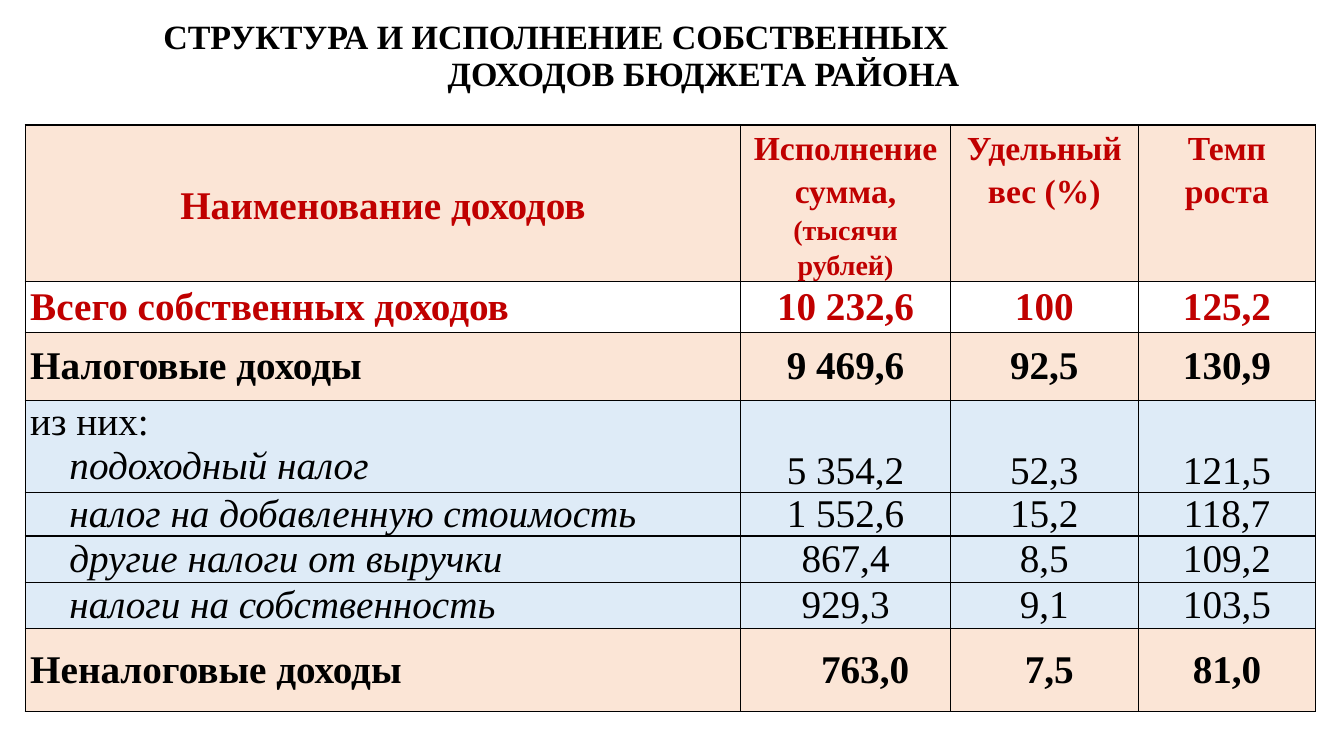
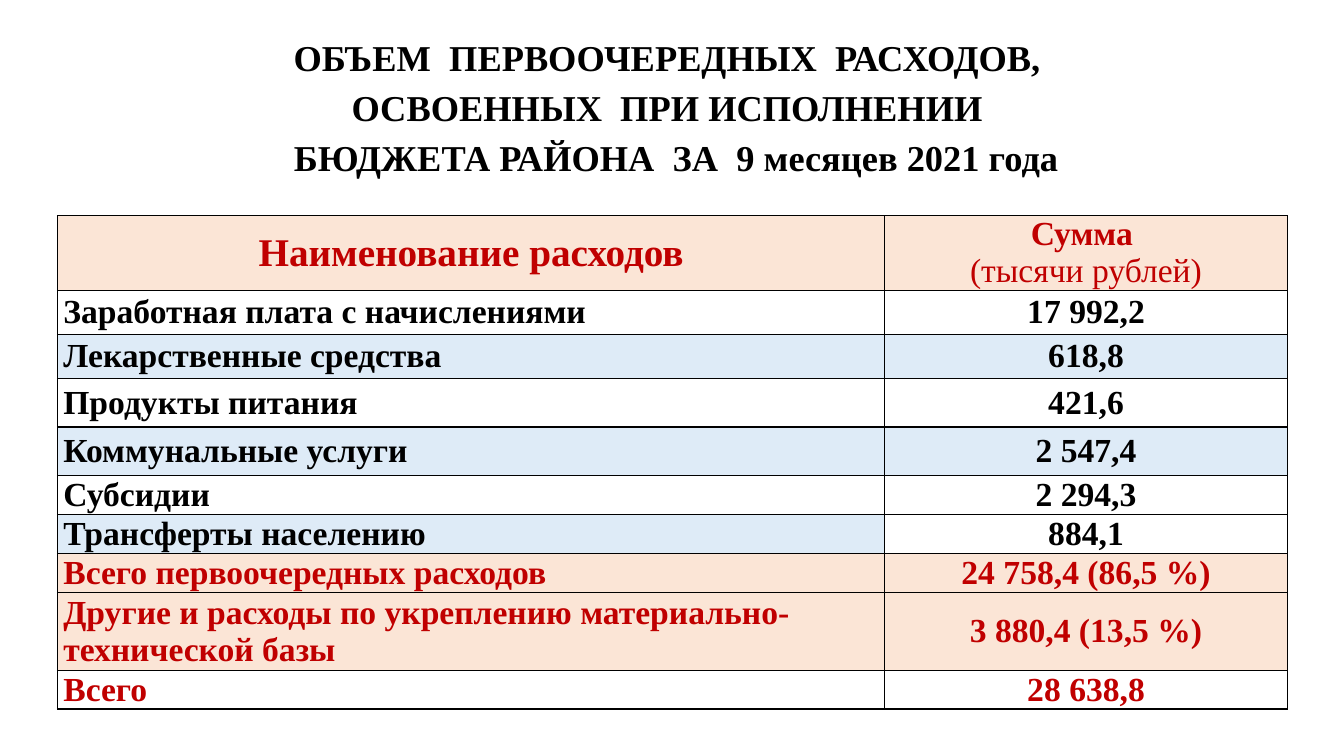
from dataclasses import dataclass, replace

from lxml import etree
from pptx import Presentation
from pptx.dml.color import RGBColor
from pptx.enum import text as t
from pptx.oxml import ns
from pptx.util import Pt

FONT = "Times New Roman"
BLACK = RGBColor(0x00, 0x00, 0x00)
RED = RGBColor(0xC0, 0x00, 0x00)
WHITE = RGBColor(0xFF, 0xFF, 0xFF)
PEACH = RGBColor(0xFB, 0xE5, 0xD6)
BLUE = RGBColor(0xDE, 0xEB, 0xF7)

LEFT, CENTER = t.PP_ALIGN.LEFT, t.PP_ALIGN.CENTER
TOP, MIDDLE, BOTTOM = t.MSO_ANCHOR.TOP, t.MSO_ANCHOR.MIDDLE, t.MSO_ANCHOR.BOTTOM
BORDER_WIDTH = Pt(1)
TITLE_ONLY = 5
NEST = 28  # indent of the individual taxes


@dataclass(frozen=True)
class Line:
    text: str
    size: float = 28
    color: RGBColor = BLACK
    bold: bool = True
    italic: bool = False
    align: t.PP_ALIGN = CENTER
    indent: float = 0
    spacing: float = 1.0


@dataclass(frozen=True)
class Cell:
    lines: list[Line]
    fill: RGBColor = WHITE
    anchor: t.MSO_ANCHOR = MIDDLE


@dataclass(frozen=True)
class Row:
    height: float
    cells: list[Cell]


@dataclass(frozen=True)
class Grid:
    left: float
    top: float
    columns: list[float]
    inset: float
    rows: list[Row]


def write_lines(frame, lines: list[Line]) -> None:
    frame.text = "\n".join(line.text for line in lines)
    for paragraph, line in zip(frame.paragraphs, lines):
        paragraph.alignment = line.align
        paragraph.line_spacing = line.spacing
        if line.indent:
            paragraph._p.get_or_add_pPr().set("marL", str(Pt(line.indent)))
        for run in paragraph.runs:
            font = run.font
            font.name, font.size = FONT, Pt(line.size)
            font.bold, font.italic = line.bold, line.italic
            font.color.rgb = line.color


def add_titled_slide(deck, box: tuple[float, ...], lines: list[Line]):
    slide = deck.slides.add_slide(deck.slide_layouts[TITLE_ONLY])
    title = slide.shapes.title
    title.left, title.top, title.width, title.height = map(Pt, box)
    frame = title.text_frame
    frame.word_wrap = True
    frame.auto_size = t.MSO_AUTO_SIZE.NONE
    frame.vertical_anchor = MIDDLE
    write_lines(frame, lines)
    return slide


def draw_borders(cell) -> None:
    properties = cell._tc.get_or_add_tcPr()
    for position, side in enumerate(("a:lnL", "a:lnR", "a:lnT", "a:lnB")):
        edge = etree.Element(ns.qn(side), w=str(BORDER_WIDTH))
        paint = etree.SubElement(edge, ns.qn("a:solidFill"))
        etree.SubElement(paint, ns.qn("a:srgbClr"), val=str(BLACK))
        properties.insert(position, edge)


def add_grid(slide, grid: Grid) -> None:
    width = sum(grid.columns)
    height = sum(row.height for row in grid.rows)
    table = slide.shapes.add_table(
        len(grid.rows), len(grid.columns),
        Pt(grid.left), Pt(grid.top), Pt(width), Pt(height)).table
    table.first_row = table.horz_banding = False
    for column, column_width in zip(table.columns, grid.columns):
        column.width = Pt(column_width)
    for table_row, row in zip(table.rows, grid.rows):
        table_row.height = Pt(row.height)
        for target, content in zip(table_row.cells, row.cells):
            target.margin_left = target.margin_right = Pt(grid.inset)
            target.margin_top = target.margin_bottom = 0
            target.vertical_anchor = content.anchor
            target.fill.solid()
            target.fill.fore_color.rgb = content.fill
            write_lines(target.text_frame, content.lines)
            draw_borders(target)


def figures_row(height: float, name: str, values: list[str], fill: RGBColor,
                style: Line) -> Row:
    """Left-aligned name followed by centred figures in one style."""
    cells = [Cell([replace(style, text=name, align=LEFT)], fill)]
    cells += [Cell([replace(style, text=value)], fill) for value in values]
    return Row(height, cells)


def tax_row(height: float, name: str, values: list[str],
            lead: str = "") -> Row:
    """Nested tax in italics, with an optional lead-in line above it."""
    plain = Line("", bold=False)
    label = [replace(plain, text=lead, align=LEFT)] if lead else []
    label.append(replace(plain, text=name, italic=True, align=LEFT,
                         indent=NEST))
    anchor = BOTTOM if lead else MIDDLE
    cells = [Cell(label, BLUE, TOP if lead else MIDDLE)]
    cells += [Cell([replace(plain, text=value)], BLUE, anchor)
              for value in values]
    return Row(height, cells)


def income_grid() -> Grid:
    heading = Line("", 24, RED, spacing=1.15)
    header = Row(111, [
        Cell([replace(heading, text="Наименование доходов", size=28)], PEACH),
        Cell([replace(heading, text="Исполнение сумма,"),
              replace(heading, text="(тысячи рублей)", size=20)], PEACH, TOP),
        Cell([replace(heading, text="Удельный вес (%)")], PEACH, TOP),
        Cell([replace(heading, text="Темп роста")], PEACH, TOP),
    ])
    non_tax = Row(59.5, [
        Cell([Line("Неналоговые доходы", align=LEFT)], PEACH),
        Cell([Line("763,0", indent=NEST)], PEACH),
        Cell([Line("7,5", indent=7)], PEACH),
        Cell([Line("81,0")], PEACH),
    ])
    return Grid(18, 89.3, [511, 150, 134, 127], 3.6, [
        header,
        figures_row(36, "Всего собственных доходов",
                    ["10 232,6", "100", "125,2"], WHITE, Line("", color=RED)),
        figures_row(49, "Налоговые доходы", ["9 469,6", "92,5", "130,9"],
                    PEACH, Line("")),
        tax_row(65.5, "подоходный налог", ["5 354,2", "52,3", "121,5"],
                lead="из них:"),
        tax_row(30.5, "налог на добавленную стоимость",
                ["1 552,6", "15,2", "118,7"]),
        tax_row(33, "другие налоги от выручки", ["867,4", "8,5", "109,2"]),
        tax_row(33, "налоги на собственность", ["929,3", "9,1", "103,5"]),
        non_tax,
    ])


def expense_grid() -> Grid:
    item, total = Line("", 24), Line("", 24, RED)
    header = Row(53.5, [
        Cell([Line("Наименование расходов", color=RED)], PEACH),
        Cell([replace(total, text="Сумма "),
              replace(total, text="(тысячи рублей)", bold=False)], PEACH),
    ])
    transfers = Row(28, [
        Cell([replace(item, text="Трансферты населению", align=LEFT)], BLUE),
        Cell([replace(item, text="884,1")], WHITE),
    ])
    items = [
        (31.5, "Заработная плата с начислениями", "17 992,2", WHITE),
        (31.5, "Лекарственные средства", "618,8", BLUE),
        (34.5, "Продукты питания", "421,6", WHITE),
        (34.5, "Коммунальные услуги", "2 547,4", BLUE),
        (28, "Субсидии", "2 294,3", WHITE),
    ]
    totals = [
        (27.5, "Всего первоочередных расходов", "24 758,4 (86,5 %)", PEACH),
        (56, "Другие и расходы по укреплению материально-технической базы",
         "3 880,4 (13,5 %)", PEACH),
        (27.5, "Всего", "28 638,8", WHITE),
    ]
    item_rows, total_rows = (
        [figures_row(height, name, [amount], fill, style)
         for height, name, amount, fill in group]
        for group, style in ((items, item), (totals, total)))
    return Grid(41, 154, [591, 287.5], 4.3,
                [header, *item_rows, transfers, *total_rows])


def main() -> None:
    deck = Presentation()
    deck.slide_width, deck.slide_height = Pt(960), Pt(540)

    income_title = Line("", 24.3, spacing=0.9)
    income = add_titled_slide(deck, (67.5, 16, 828, 49), [
        replace(income_title, text="СТРУКТУРА И ИСПОЛНЕНИЕ СОБСТВЕННЫХ",
                align=LEFT, indent=42),
        replace(income_title, text="ДОХОДОВ БЮДЖЕТА РАЙОНА"),
    ])
    add_grid(income, income_grid())

    expense_title = Line("", 26, spacing=1.15)
    expenses = add_titled_slide(deck, (66, 30, 828, 88), [
        replace(expense_title, text=text) for text in (
            "ОБЪЕМ  ПЕРВООЧЕРЕДНЫХ  РАСХОДОВ, ",
            "ОСВОЕННЫХ  ПРИ ИСПОЛНЕНИИ ",
            " БЮДЖЕТА РАЙОНА  ЗА  9 месяцев 2021 года")
    ])
    add_grid(expenses, expense_grid())

    deck.save("out.pptx")


if __name__ == "__main__":
    main()
